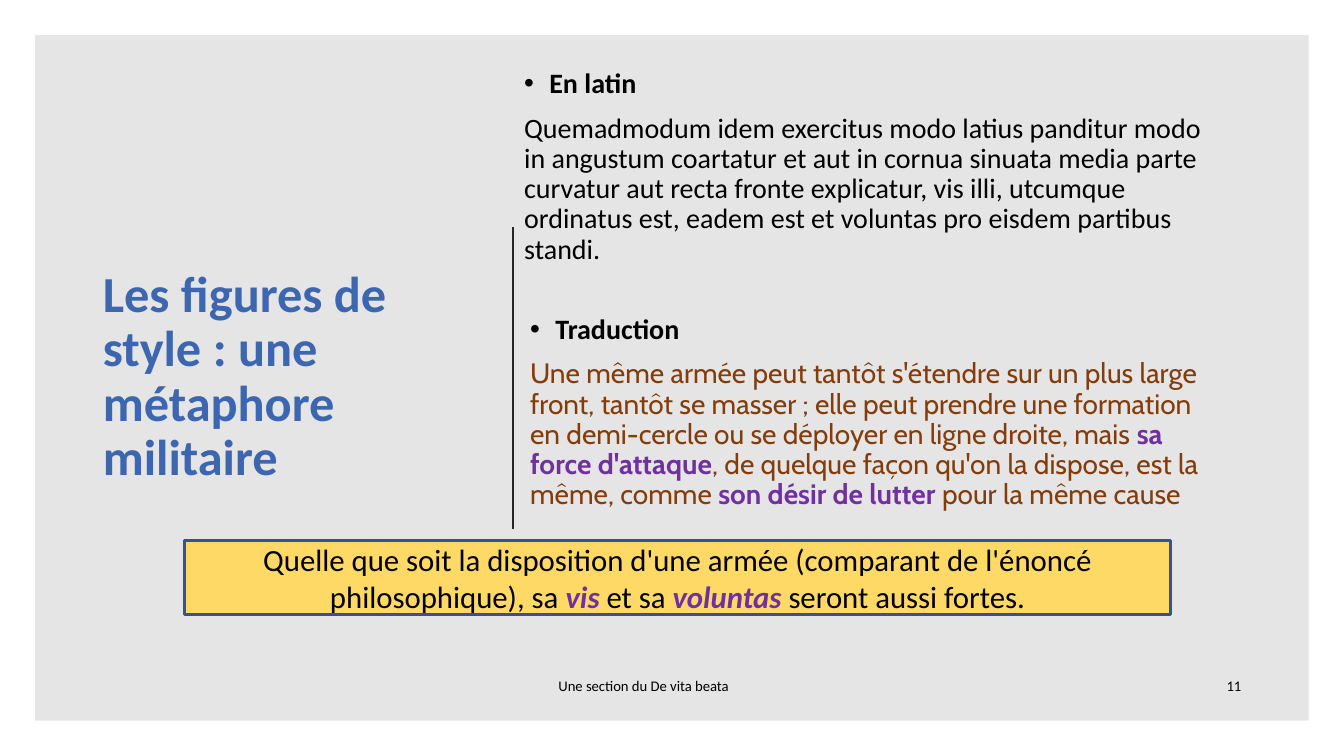
from dataclasses import dataclass

from lxml import etree
from pptx import Presentation
from pptx import util as u
from pptx.dml.color import RGBColor
from pptx.enum import shapes, text
from pptx.oxml import ns

COLORS = {
    "black": "000000",
    "title": "4472C4",
    "rule": "262626",
    "translation": "843C0B",
    "accent": "7030A0",
    "callout": "FFD966",
    "callout_line": "325491",
}


@dataclass(frozen=True)
class Area:
    left: float
    top: float
    width: float
    height: float

    def lengths(self) -> tuple:
        return tuple(u.Inches(n) for n in (self.left, self.top, self.width, self.height))


@dataclass(frozen=True)
class Span:
    text: str
    color: str = "black"
    bold: bool = False
    italic: bool = False
    font: str = "Calibri"


@dataclass(frozen=True)
class Passage:
    area: Area
    heading: str
    body: tuple[Span, ...]
    anchor: text.MSO_ANCHOR


@dataclass(frozen=True)
class FooterItem:
    area: Area
    label: str
    align: text.PP_ALIGN


PASSAGES = (
    Passage(
        Area(5.1, 0.35, 7.12, 2.33),
        "En latin",
        (Span("Quemadmodum idem exercitus modo latius panditur modo in angustum "
              "coartatur et aut in cornua sinuata media parte curvatur aut recta "
              "fronte explicatur, vis illi, utcumque ordinatus est, eadem est et "
              "voluntas pro eisdem partibus standi."),),
        text.MSO_ANCHOR.BOTTOM,
    ),
    Passage(
        Area(5.16, 3.08, 6.84, 2.2),
        "Traduction",
        (
            Span("Une même armée peut tantôt s'étendre sur un plus large front, tantôt "
                 "se masser ; elle peut prendre une formation en demi-cercle ou se "
                 "déployer en ligne droite, mais ", "translation", font="Cabin"),
            Span("sa force d'attaque", "accent", bold=True, font="Cabin"),
            Span(", de quelque façon qu'on la dispose, est la même, comme ",
                 "translation", font="Cabin"),
            Span("son désir de lutter", "accent", bold=True, font="Cabin"),
            Span(" pour la même cause", "translation", font="Cabin"),
        ),
        text.MSO_ANCHOR.TOP,
    ),
)

CALLOUT = (
    Span("Quelle que soit la disposition d'une armée (comparant de l'énoncé "
         "philosophique), sa "),
    Span("vis ", "accent", bold=True, italic=True),
    Span("et sa "),
    Span("voluntas ", "accent", bold=True, italic=True),
    Span("seront aussi fortes."),
)

FOOTER = (
    FooterItem(Area(5.44, 6.6, 5.75, 0.4), "Une section du De vita beata", text.PP_ALIGN.LEFT),
    FooterItem(Area(11.56, 6.6, 0.85, 0.4), "11", text.PP_ALIGN.RIGHT),
)


def rgb(name: str) -> RGBColor:
    return RGBColor.from_string(COLORS[name])


def write(para, *spans: Span, size: float, align=text.PP_ALIGN.LEFT,
          line_spacing: float = 1.0, before: float = 0, after: float = 0) -> None:
    para.alignment = align
    para.line_spacing = line_spacing
    para.space_before = u.Pt(before)
    para.space_after = u.Pt(after)
    for span in spans:
        run = para.add_run()
        run.text = span.text
        run.font.name = span.font
        run.font.size = u.Pt(size)
        run.font.bold = span.bold
        run.font.italic = span.italic
        run.font.color.rgb = rgb(span.color)


def add_bullet(para) -> None:
    properties = para._p.get_or_add_pPr()
    properties.set("marL", str(u.Inches(0.25)))
    properties.set("indent", str(u.Inches(-0.25)))
    color = etree.SubElement(properties, ns.qn("a:buClr"))
    etree.SubElement(color, ns.qn("a:srgbClr"), val=COLORS["black"])
    etree.SubElement(properties, ns.qn("a:buFont"), typeface="Arial")
    etree.SubElement(properties, ns.qn("a:buChar"), char="•")


def prepare_frame(box, anchor: text.MSO_ANCHOR):
    frame = box.text_frame
    frame.word_wrap = True
    frame.auto_size = text.MSO_AUTO_SIZE.NONE
    frame.vertical_anchor = anchor
    return frame


def add_panel(page) -> None:
    panel = page.shapes.add_shape(shapes.MSO_SHAPE.RECTANGLE,
                                  *Area(0.35, 0.35, 12.63, 6.8).lengths())
    panel.shadow.inherit = False
    panel.fill.solid()
    panel.fill.fore_color.rgb = rgb("black")
    color = panel._element.spPr.find(".//" + ns.qn("a:srgbClr"))
    etree.SubElement(color, ns.qn("a:alpha"), val="10000")
    panel.line.fill.background()


def place_title(page) -> None:
    title = page.shapes.title
    title.left, title.top, title.width, title.height = Area(0.92, 1.05, 3.25, 5.39).lengths()
    frame = prepare_frame(title, text.MSO_ANCHOR.MIDDLE)
    write(frame.paragraphs[0],
          Span("Les figures de style : une métaphore militaire", "title", bold=True),
          size=36, line_spacing=0.9)


def add_rule(page) -> None:
    rule = page.shapes.add_connector(shapes.MSO_CONNECTOR.STRAIGHT, u.Inches(5.09),
                                     u.Inches(2.25), u.Inches(5.09), u.Inches(5.25))
    rule.line.color.rgb = rgb("rule")
    rule.line.width = u.Pt(1.5)
    etree.SubElement(rule._element.spPr, ns.qn("a:effectLst"))


def add_passage(page, passage: Passage) -> None:
    box = page.shapes.add_textbox(*passage.area.lengths())
    frame = prepare_frame(box, passage.anchor)
    heading = frame.paragraphs[0]
    write(heading, Span(passage.heading, bold=True), size=20, line_spacing=0.9, before=10)
    add_bullet(heading)
    write(frame.add_paragraph(), *passage.body, size=20, line_spacing=0.9, before=10)


def add_footer_item(page, item: FooterItem) -> None:
    box = page.shapes.add_textbox(*item.area.lengths())
    frame = prepare_frame(box, text.MSO_ANCHOR.MIDDLE)
    write(frame.paragraphs[0], Span(item.label), size=10.5, align=item.align, after=6)


def add_callout(page) -> None:
    box = page.shapes.add_shape(shapes.MSO_SHAPE.FLOWCHART_PROCESS,
                                *Area(1.83, 5.36, 9.78, 0.74).lengths())
    box.shadow.inherit = False
    box.fill.solid()
    box.fill.fore_color.rgb = rgb("callout")
    box.line.color.rgb = rgb("callout_line")
    box.line.width = u.Pt(2)
    frame = prepare_frame(box, text.MSO_ANCHOR.MIDDLE)
    write(frame.paragraphs[0], *CALLOUT, size=22, align=text.PP_ALIGN.CENTER)


def main() -> None:
    deck = Presentation()
    deck.slide_width, deck.slide_height = u.Inches(13.33), u.Inches(7.5)
    page = deck.slides.add_slide(deck.slide_layouts[5])
    add_panel(page)
    place_title(page)
    add_rule(page)
    for passage in PASSAGES:
        add_passage(page, passage)
    for item in FOOTER:
        add_footer_item(page, item)
    add_callout(page)
    deck.save("out.pptx")


if __name__ == "__main__":
    main()
